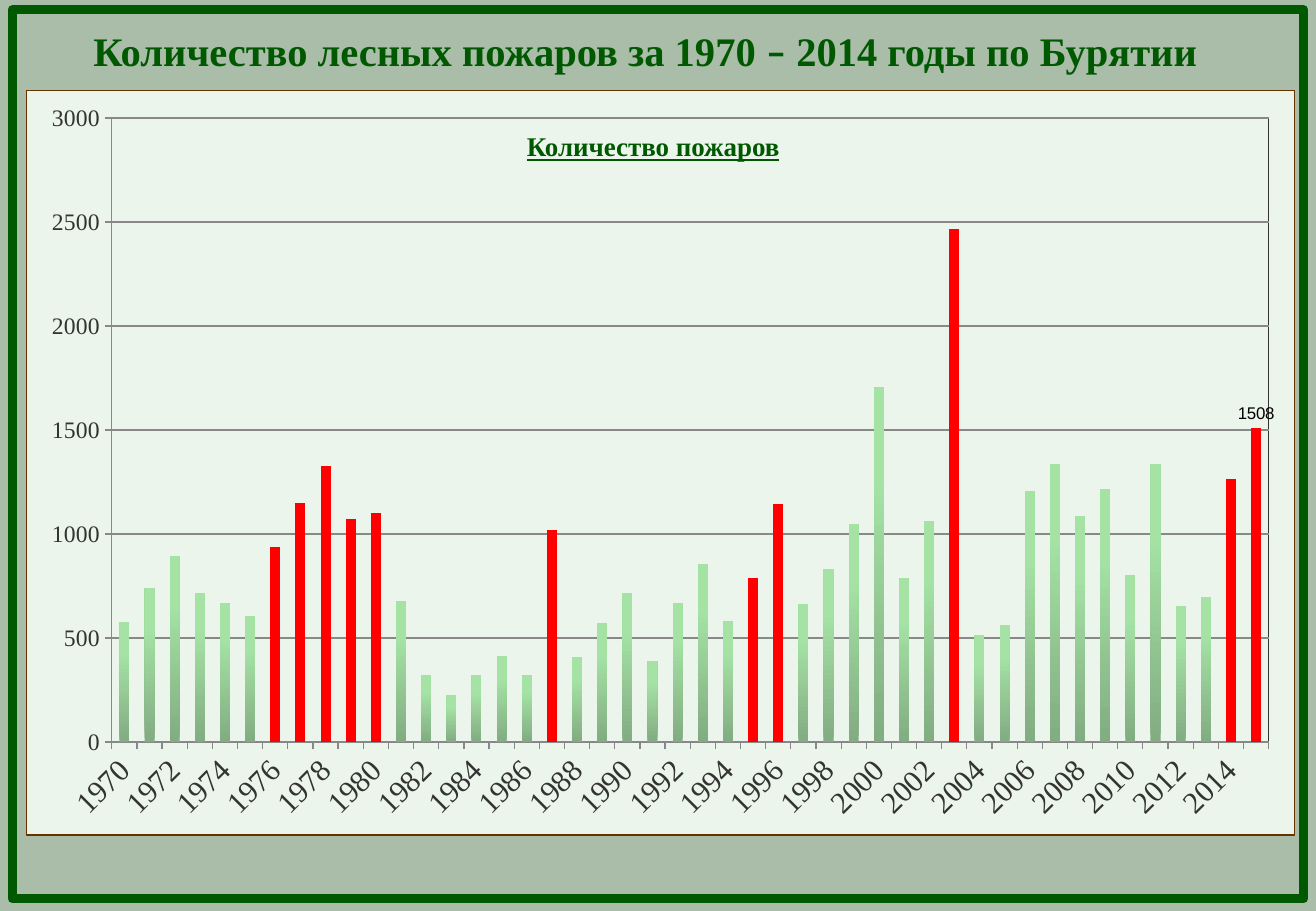
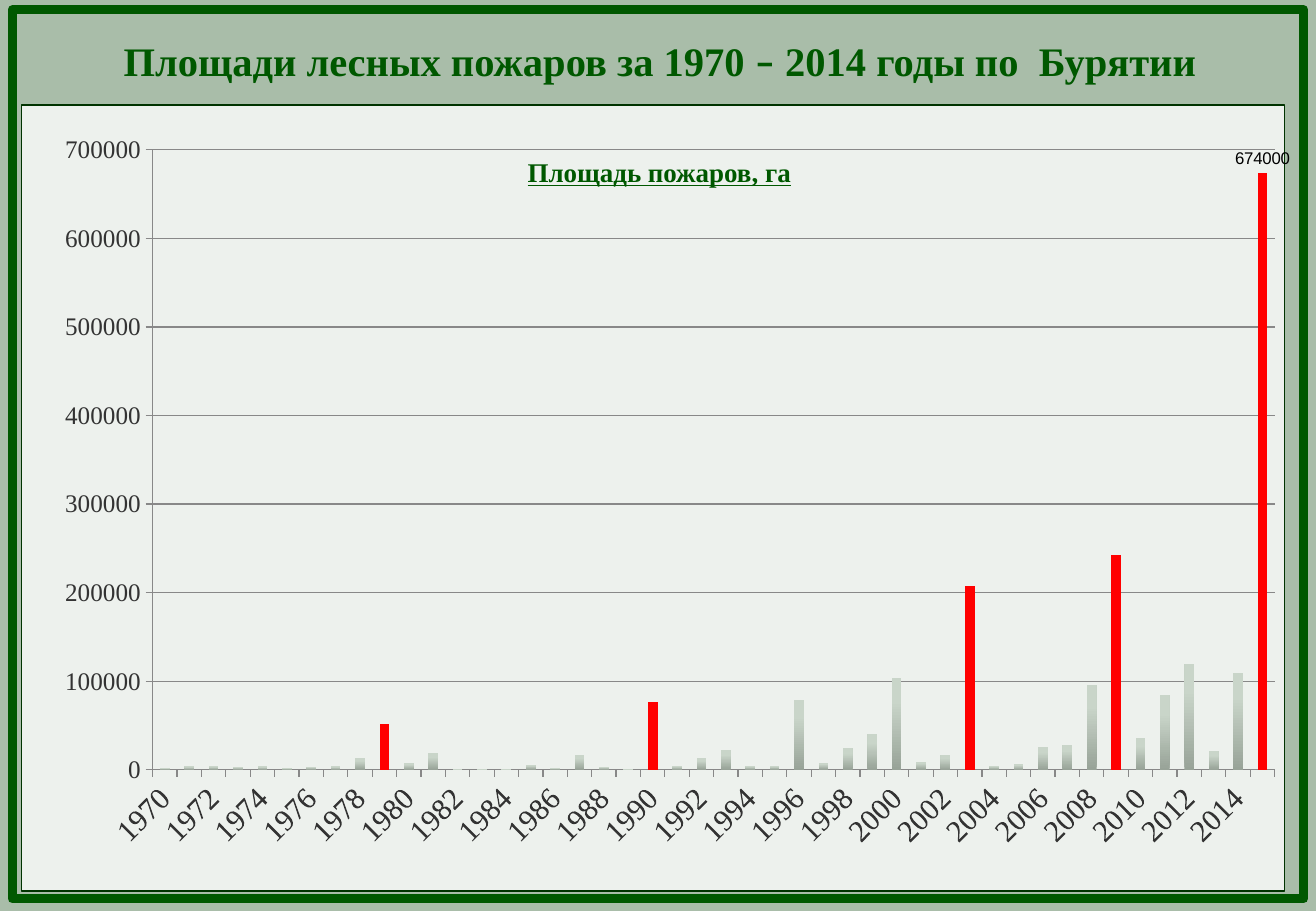
from lxml import etree
from pptx import Presentation
from pptx import util as u
from pptx.chart import data as cd
from pptx.dml import color as dc
from pptx.enum import chart as ec, shapes, text
from pptx.oxml import ns

W, H = 10.83, 7.5
SERIF = "Times New Roman"
GREEN, BACK, RED, GREY, INK = "005800", "A9BDA9", "FF0000", "888888", "333333"
YEARS = range(1970, 2016)

COUNTS = [
    576, 740, 895, 717, 668, 605, 935, 1150, 1327, 1074, 1103, 678,
    324, 226, 321, 414, 324, 1021, 408, 570, 715, 389, 669, 857,
    580, 787, 1142, 664, 832, 1048, 1707, 787, 1064, 2466, 513, 560,
    1206, 1336, 1086, 1214, 802, 1334, 654, 697, 1264, 1508]
AREAS = [
    2021, 3896, 4221, 3272, 3872, 1584, 3328, 3735, 13105, 51131, 7623, 18442,
    1030, 397, 1274, 5763, 2138, 17085, 3644, 944, 76823, 4683, 13350, 22224,
    4281, 4374, 79294, 8172, 24222, 40693, 103202, 9225, 16923, 207896, 4658, 6488,
    25600, 28500, 95970.68, 242405.7, 35932, 84170, 119042, 21493.9, 109164.26, 674000]


def rgb(value):
    return dc.RGBColor.from_string(value)


def place(left, top, width, height):
    return [u.Inches(size * share / 100) for size, share in
            ((W, left), (H, top), (W, width), (H, height))]


def style(font, size, color=GREEN, name=SERIF, bold=None, underline=None):
    font.size, font.name = u.Pt(size), name
    font.bold, font.underline = bold, underline
    font.color.rgb = rgb(color)


def add_base(prs):
    s = prs.slides.add_slide(prs.slide_layouts[6])
    s.background.fill.solid()
    s.background.fill.fore_color.rgb = rgb(BACK)
    sp = s.shapes.add_shape(shapes.MSO_SHAPE.RECTANGLE, *place(0.92, 1.07, 98.15, 97.6))
    sp.shadow.inherit = False
    sp.fill.background()
    sp.line.color.rgb = rgb(GREEN)
    sp.line.width = u.Pt(5.25)
    return s


def add_text(s, area, runs, size, wrap=True, underline=None):
    tf = s.shapes.add_textbox(*place(*area)).text_frame
    tf.word_wrap = wrap
    tf.vertical_anchor = text.MSO_ANCHOR.TOP if wrap else text.MSO_ANCHOR.MIDDLE
    p = tf.paragraphs[0]
    p.alignment = text.PP_ALIGN.CENTER
    style(p.font, size, bold=True, underline=underline)
    for words, name in runs:
        r = p.add_run()
        r.text = words
        r.font.name = name


def add_title(s, area, before, after):
    add_text(s, area, [(before, SERIF), ("–", "Calibri"), (after, SERIF)], 24, wrap=False)


def add_subtitle(s, left, top, words):
    add_text(s, (left, top, 30.75, 4.93), [(words, SERIF)], 16, underline=True)


def shape_props(fill, line, width=0.75):
    paint = f'<a:solidFill><a:srgbClr val="{fill}"/></a:solidFill>' if fill else "<a:noFill/>"
    return etree.fromstring(
        f'<c:spPr {ns.nsdecls("c", "a")}>{paint}<a:ln w="{u.Pt(width)}"><a:solidFill>'
        f'<a:srgbClr val="{line}"/></a:solidFill></a:ln></c:spPr>')


def set_layout(plot_area, shares):
    for old in plot_area.findall(ns.qn("c:layout")):
        plot_area.remove(old)
    sizes = "".join(f'<c:{key} val="{share / 100}"/>' for key, share in zip("xywh", shares))
    plot_area.insert(0, etree.fromstring(
        f'<c:layout {ns.nsdecls("c")}><c:manualLayout><c:layoutTarget val="inner"/>'
        f'<c:xMode val="edge"/><c:yMode val="edge"/>{sizes}</c:manualLayout></c:layout>'))


def style_axes(chart, top, step, size):
    for axis, points in ((chart.category_axis, 18), (chart.value_axis, size)):
        style(axis.tick_labels.font, points, INK)
        axis.format.line.color.rgb = rgb(GREY)
        axis.major_tick_mark = ec.XL_TICK_MARK.OUTSIDE
    value = chart.value_axis
    value.minimum_scale, value.maximum_scale, value.major_unit = 0, top, step
    value.major_gridlines.format.line.color.rgb = rgb(GREY)
    cat = chart.category_axis._element
    cat.find(ns.qn("c:txPr")).find(ns.qn("a:bodyPr")).set("rot", "-2700000")
    offset = cat.find(ns.qn("c:lblOffset"))
    for tag, every in (("c:tickMarkSkip", 1), ("c:tickLblSkip", 2)):
        skip = etree.Element(ns.qn(tag))
        skip.set("val", str(every))
        offset.addnext(skip)


def style_bars(chart, shades, red_years):
    plot = chart.plots[0]
    plot.vary_by_categories = False
    plot.gap_width = 150
    bars = plot.series[0]
    bars.invert_if_negative = False
    fill = bars.format.fill
    fill.gradient()
    fill.gradient_angle = 90
    for stop, shade, position in zip(fill.gradient_stops, shades, (0, 0.75)):
        stop.color.rgb = rgb(shade)
        stop.position = position
    for year in red_years:
        point = bars.points[YEARS.index(year)].format.fill
        point.solid()
        point.fore_color.rgb = rgb(RED)
    bars.data_labels.show_value = False
    label = bars.points[len(YEARS) - 1].data_label
    style(label.font, 10, "000000", "Arial")
    label.position = ec.XL_LABEL_POSITION.OUTSIDE_END


def add_bars(s, area, layout, values, red_years, scale, fill, border, shades, frame=None):
    data = cd.CategoryChartData()
    data.categories = [str(year) for year in YEARS]
    data.add_series("Series 1", values)
    chart = s.shapes.add_chart(
        ec.XL_CHART_TYPE.COLUMN_CLUSTERED, *place(*area), data).chart
    chart.has_title = chart.has_legend = False
    style(chart.font, 18, INK)
    style_axes(chart, *scale)
    style_bars(chart, shades, red_years)
    space = chart._chartSpace
    space.find(ns.qn("c:txPr")).addprevious(shape_props(fill, border))
    plot_area = space.find(ns.qn("c:chart")).find(ns.qn("c:plotArea"))
    set_layout(plot_area, layout)
    if frame:
        plot_area.append(shape_props(None, frame))


def main():
    prs = Presentation()
    prs.slide_width, prs.slide_height = u.Inches(W), u.Inches(H)

    s = add_base(prs)
    add_bars(s, (1.94, 9.87, 96.49, 81.87), (6.75, 3.7, 91.2, 83.8), COUNTS,
             [*range(1976, 1981), 1987, 1995, 1996, 2003, 2014, 2015],
             (3000, 500, 14), "ECF5EC", "663300", ("82AC82", "A5E3A5"), INK)
    add_title(s, (5.72, 2.13, 86.61, 6.67),
              "Количество лесных пожаров за 1970 ", " 2014 годы по Бурятии")
    add_subtitle(s, 34.26, 13.6, "Количество пожаров")

    s = add_base(prs)
    add_title(s, (8.03, 3.33, 84.21, 6.67),
              "Площади лесных пожаров за 1970 ", " 2014 годы по  Бурятии")
    add_bars(s, (1.57, 11.47, 96.49, 86.4), (10.4, 5.7, 88.8, 78.9), AREAS,
             [1979, 1990, 2003, 2009, 2015],
             (700000, 100000, 15), "EDF1ED", "003300", ("98A398", "C9D5C9"))
    add_subtitle(s, 34.72, 16.4, "Площадь пожаров, га")

    prs.save("out.pptx")


if __name__ == "__main__":
    main()
